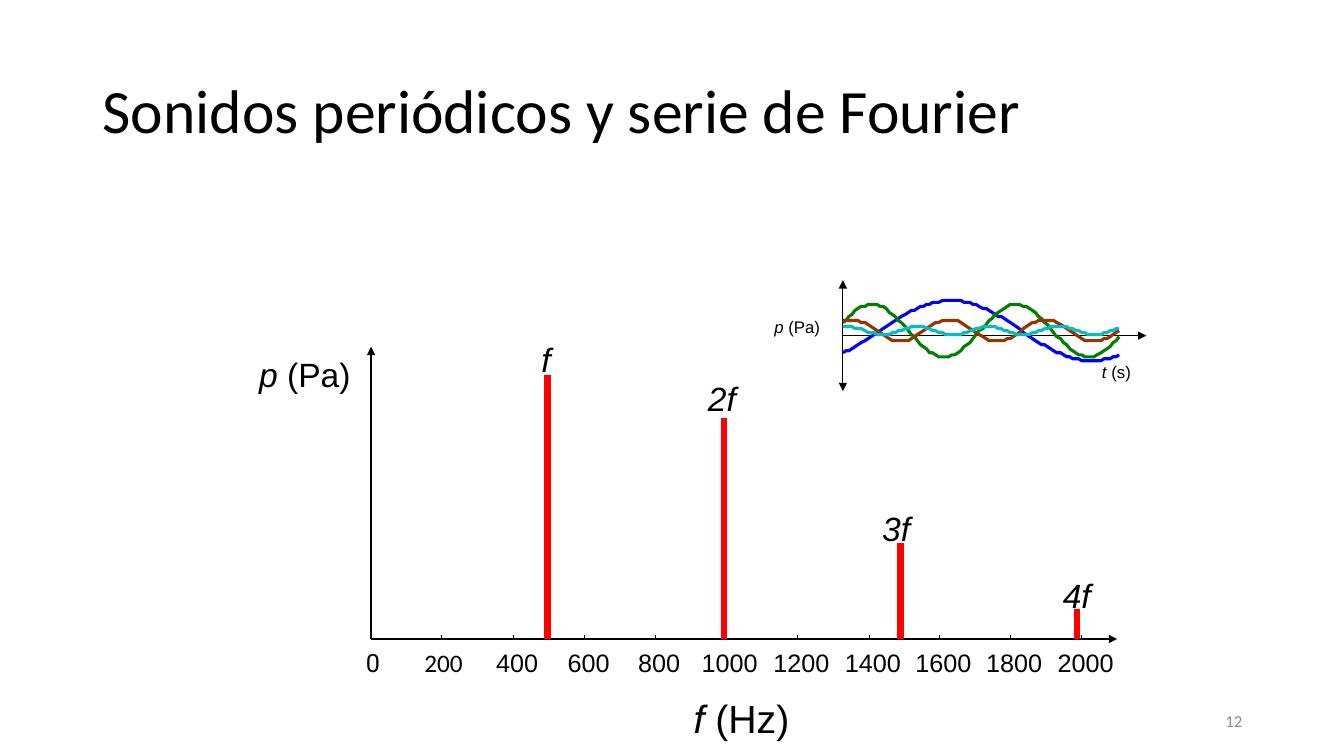
import math
from collections import namedtuple

from lxml import etree
from pptx import Presentation
from pptx import util as u
from pptx.dml import color
from pptx.enum import shapes, text
from pptx.oxml import ns

PX = u.Inches(1) // 100

Box = namedtuple("Box", "left top width height")
Harmonic = namedtuple("Harmonic", "name height label_dx label_dy label_width align")
Wave = namedtuple("Wave", "hue amplitude period crest")


class Theme:
    """Fonts, type sizes in points and colours of the slide."""
    TITLE_FONT, FONT, ZERO_FONT = "Calibri", "Arial", "Roboto"
    TITLE, FREQUENCY, LABEL, TICK, SMALL = 44, 28, 24, 18, 12
    INK, MUTED, STEM = "000000", "8C8C8C", "FF0000"
    BLUE, GREEN, BROWN, CYAN = "0000FF", "007F00", "993300", "00BFBF"


LEFT, CENTER, RIGHT = text.PP_ALIGN.LEFT, text.PP_ALIGN.CENTER, text.PP_ALIGN.RIGHT
HARMONICS = [
    Harmonic("f", 262, -6, -36, 24, LEFT),
    Harmonic("2f", 219, -30, -40, 56, CENTER),
    Harmonic("3f", 95, -18, -35, 50, LEFT),
    Harmonic("4f", 30, -20, -34, 40, CENTER),
]
WAVES = [
    Wave(Theme.BLUE, 30, 280, 107),
    Wave(Theme.GREEN, 26, 143, 29),
    Wave(Theme.BROWN, 11, 96, 9),
    Wave(Theme.CYAN, 4, 70, 4),
]


def rgb(hue):
    """Turn a hex string into a colour."""
    return color.RGBColor.from_string(hue)


def add_text(slide, box, symbol, rest="", size=Theme.LABEL, font=Theme.FONT,
             hue=Theme.INK, align=LEFT, inset=0, wrap=True, middle=False):
    """Write an italic symbol followed by upright text."""
    frame = slide.shapes.add_textbox(*(n * PX for n in box)).text_frame
    frame.word_wrap = wrap
    frame.margin_left = frame.margin_right = inset * PX
    frame.margin_top = frame.margin_bottom = inset * PX // 2
    frame.vertical_anchor = text.MSO_ANCHOR.MIDDLE if middle else text.MSO_ANCHOR.TOP
    line = frame.paragraphs[0]
    line.alignment = align
    line.font.name, line.font.size = font, u.Pt(size)
    line.font.color.rgb = rgb(hue)
    for words, italic in ((symbol, True), (rest, False)):
        if words:
            run = line.add_run()
            run.text, run.font.italic = words, italic
    return line


def add_line(slide, start, end, hue=Theme.INK, weight=0.75, arrows=()):
    """Draw a straight line with triangles at the named ends."""
    line = slide.shapes.add_connector(
        shapes.MSO_CONNECTOR.STRAIGHT, *(n * PX for n in start + end))
    line.line.color.rgb, line.line.width = rgb(hue), u.Pt(weight)
    properties = line.element.spPr
    stroke = properties.find(ns.qn("a:ln"))
    for arrow in arrows:
        etree.SubElement(stroke, ns.qn(f"a:{arrow}")).set("type", "triangle")
    etree.SubElement(properties, ns.qn("a:effectLst"))


def add_wave(slide, box, wave):
    """Trace a cosine across the box on a grid of two pixels."""
    middle = box.top + box.height // 2
    steps = 89
    points = []
    for step in range(steps + 1):
        x = box.width * step / steps
        turn = 2 * math.pi * (x - wave.crest) / wave.period
        points.append((box.left + x, middle - 2 * round(wave.amplitude * math.cos(turn) / 2)))
    builder = slide.shapes.build_freeform(*points[0], scale=PX)
    builder.add_line_segments(points[1:], close=False)
    curve = builder.convert_to_shape()
    curve.shadow.inherit = False
    curve.fill.background()
    curve.line.color.rgb, curve.line.width = rgb(wave.hue), u.Pt(2.25)


def add_frequency_axis(slide, box):
    """Draw the axes, ticks and tick labels of the spectrum."""
    base = box.top + box.height
    add_line(slide, (box.left, base), (box.left + box.width, base), weight=1, arrows=["tailEnd"])
    add_line(slide, (box.left, base), (box.left, box.top), weight=1, arrows=["tailEnd"])
    label_shift = {1: 5, 3: 17, 4: 24}
    odd_fonts = {0: Theme.ZERO_FONT, 200: Theme.TITLE_FONT}
    for hertz in range(0, 2001, 200):
        x = box.left + round(hertz * 0.3525)
        if hertz:
            add_line(slide, (x, base), (x, base - 4))
        label = str(hertz)
        add_text(slide, Box(x - label_shift[len(label)], base + 8, 63, 55), "", label,
                 Theme.TICK, odd_fonts.get(hertz, Theme.FONT))


def add_spectrum(slide, box):
    """Draw the harmonics as stems over the frequency axis."""
    add_frequency_axis(slide, box)
    base = box.top + box.height
    for order, harmonic in enumerate(HARMONICS, 1):
        x, top = box.left + 175 * order, base - harmonic.height
        add_line(slide, (x, base), (x, top), Theme.STEM, 4.5)
        label = Box(x + harmonic.label_dx, top + harmonic.label_dy, harmonic.label_width, 43)
        add_text(slide, label, harmonic.name, align=harmonic.align)
    add_text(slide, Box(box.left - 111, box.top + 7, 105, 43), "p", " (Pa)")
    add_text(slide, Box(box.left + 320, base + 55, 133, 56), "f", " (Hz)", Theme.FREQUENCY)


def add_waveforms(slide, box):
    """Draw the harmonics against time."""
    middle = box.top + box.height // 2
    right = box.left + box.width
    add_line(slide, (box.left, middle), (right, middle), arrows=["tailEnd"])
    add_line(slide, (box.left, box.top + box.height), (box.left, box.top),
             arrows=["headEnd", "tailEnd"])
    for wave in WAVES:
        add_wave(slide, box._replace(top=box.top - 5, width=274), wave)
    add_text(slide, Box(box.left - 68, middle - 19, 57, 59), "p", " (Pa)", Theme.SMALL, wrap=False)
    add_text(slide, Box(right - 44, middle + 26, 44, 43), "t", " (s)", Theme.SMALL)


def add_title(slide, box):
    """Write the slide title."""
    title = add_text(slide, box, "", "Sonidos periódicos y serie de Fourier", Theme.TITLE,
                     Theme.TITLE_FONT, inset=10, middle=True)
    title.line_spacing = 0.9


def add_page_number(slide, box):
    """Write the page number."""
    add_text(slide, box, "", "12", Theme.SMALL, Theme.TITLE_FONT, Theme.MUTED, RIGHT,
             inset=10, middle=True)


def main():
    """Build and save the slide."""
    deck = Presentation()
    deck.slide_width, deck.slide_height = 1333 * PX, 750 * PX
    slide = deck.slides.add_slide(deck.slide_layouts[6])
    add_title(slide, Box(92, 40, 1150, 145))
    add_spectrum(slide, Box(368, 344, 740, 290))
    add_waveforms(slide, Box(836, 278, 301, 110))
    add_page_number(slide, Box(942, 695, 300, 40))
    deck.save("out.pptx")


if __name__ == "__main__":
    main()
